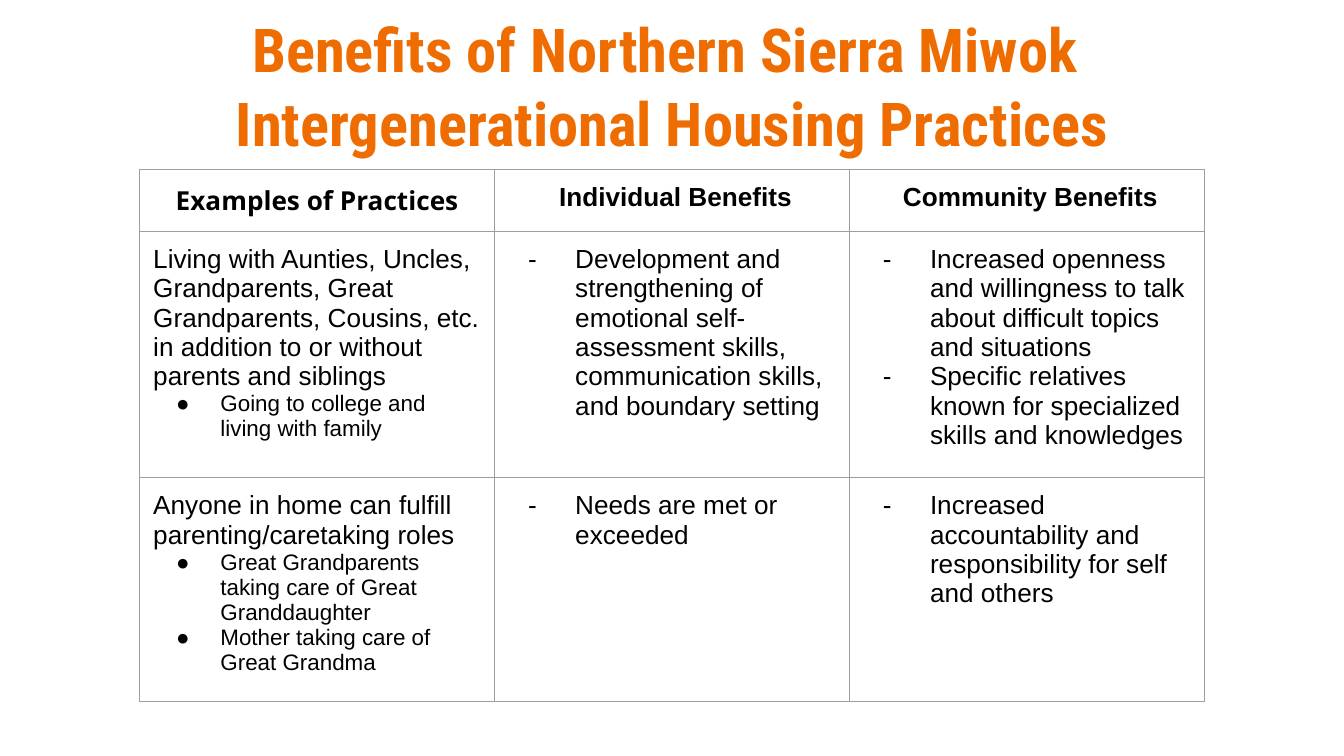
from lxml.etree import SubElement
from pptx import Presentation
from pptx.dml.color import RGBColor
from pptx.enum.text import MSO_ANCHOR, PP_ALIGN
from pptx.oxml.ns import qn
from pptx.util import Inches, Pt

ORANGE = RGBColor(0xEF, 0x6C, 0x00)
BLACK = RGBColor(0, 0, 0)
GREY = RGBColor(0x9E, 0x9E, 0x9E)

SLIDE_W = 10
SLIDE_H = SLIDE_W * 9 / 16
TITLE_H = 1.26
COL_W = 2.64
ROW_HEIGHTS = [0.46, 1.73, 1.57]
INSET = Inches(0.1)

TITLE = ["Benefits of Northern Sierra Miwok ",
         "Intergenerational Housing Practices"]

# Header texts with their fonts
HEADERS = [("Examples of Practices", "Open Sans"),
           (" Individual Benefits", "Arial"),
           (" Community Benefits", "Arial")]

# Kinds of body paragraph: bullet, hanging indent, text size
STYLES = {"plain": (None, 0, 14),
          "dot": ("●", 0.33, 12),
          "dash": ("-", 0.35, 14)}

BODY = [
    [[("plain", "Living with Aunties, Uncles, Grandparents, Great Grandparents, "
                "Cousins, etc. in addition to or without parents and siblings"),
      ("dot", "Going to college and living with family")],
     [("dash", "Development and strengthening of emotional self-assessment "
               "skills, communication skills, and boundary setting")],
     [("dash", "Increased openness and willingness to talk about difficult "
               "topics and situations"),
      ("dash", "Specific relatives known for specialized skills and knowledges")]],
    [[("plain", "Anyone in home can fulfill parenting/caretaking roles"),
      ("dot", "Great Grandparents taking care of Great Granddaughter"),
      ("dot", "Mother taking care of Great Grandma")],
     [("dash", "Needs are met or exceeded")],
     [("dash", "Increased accountability and responsibility for self and others")]],
]


def add_run(p, text, size, font="Arial", color=BLACK, bold=False):
    r = p.add_run()
    r.text = text
    r.font.size = Pt(size)
    r.font.name = font
    r.font.bold = bold
    r.font.color.rgb = color


def next_paragraph(tf, i):
    return tf.add_paragraph() if i else tf.paragraphs[0]


def set_bullet(p, char, hang):
    pPr = p._p.get_or_add_pPr()
    pPr.set("marL", str(Inches(0.5)))
    pPr.set("indent", str(-Inches(hang)))
    color = SubElement(pPr, qn("a:buClr"))
    SubElement(color, qn("a:srgbClr"), val=str(BLACK))
    SubElement(pPr, qn("a:buFont"), typeface="Arial")
    SubElement(pPr, qn("a:buChar"), char=char)


def set_insets(box):
    box.margin_left = box.margin_right = INSET
    box.margin_top = box.margin_bottom = INSET


def style_cell(cell):
    set_insets(cell)
    cell.vertical_anchor = MSO_ANCHOR.TOP
    tcPr = cell._tc.get_or_add_tcPr()
    for side in ("a:lnL", "a:lnR", "a:lnT", "a:lnB"):
        ln = SubElement(tcPr, qn(side), w=str(Pt(0.75)))
        fill = SubElement(ln, qn("a:solidFill"))
        SubElement(fill, qn("a:srgbClr"), val=str(GREY))
    cell.fill.background()


def add_title(s):
    box = s.shapes.add_textbox(0, 0, Inches(SLIDE_W), Inches(TITLE_H))
    tf = box.text_frame
    tf.word_wrap = True
    tf.vertical_anchor = MSO_ANCHOR.MIDDLE
    set_insets(tf)
    for i, line in enumerate(TITLE):
        p = next_paragraph(tf, i)
        p.alignment = PP_ALIGN.CENTER
        p.line_spacing = Pt(39.7)
        add_run(p, line, 32.4, "Roboto Condensed", ORANGE, bold=True)


def add_benefits_table(s):
    rows, cols = len(ROW_HEIGHTS), len(HEADERS)
    left = (SLIDE_W - cols * COL_W) / 2
    table = s.shapes.add_table(rows, cols, Inches(left), Inches(TITLE_H),
                               Inches(cols * COL_W),
                               Inches(sum(ROW_HEIGHTS))).table
    table.first_row = table.horz_banding = False
    for col in table.columns:
        col.width = Inches(COL_W)
    for row, height in zip(table.rows, ROW_HEIGHTS):
        row.height = Inches(height)
    for cell in table.iter_cells():
        style_cell(cell)

    # Header row
    for c, (text, font) in enumerate(HEADERS):
        p = table.cell(0, c).text_frame.paragraphs[0]
        p.alignment = PP_ALIGN.CENTER
        add_run(p, text, 14, font, bold=True)

    # Body rows
    for r, row in enumerate(BODY, 1):
        for c, paragraphs in enumerate(row):
            tf = table.cell(r, c).text_frame
            for i, (kind, text) in enumerate(paragraphs):
                char, hang, size = STYLES[kind]
                p = next_paragraph(tf, i)
                if char:
                    set_bullet(p, char, hang)
                add_run(p, text, size)


def main():
    prs = Presentation()
    prs.slide_width, prs.slide_height = Inches(SLIDE_W), Inches(SLIDE_H)
    s = prs.slides.add_slide(prs.slide_layouts[6])
    add_title(s)
    add_benefits_table(s)
    prs.save("out.pptx")


if __name__ == "__main__":
    main()
